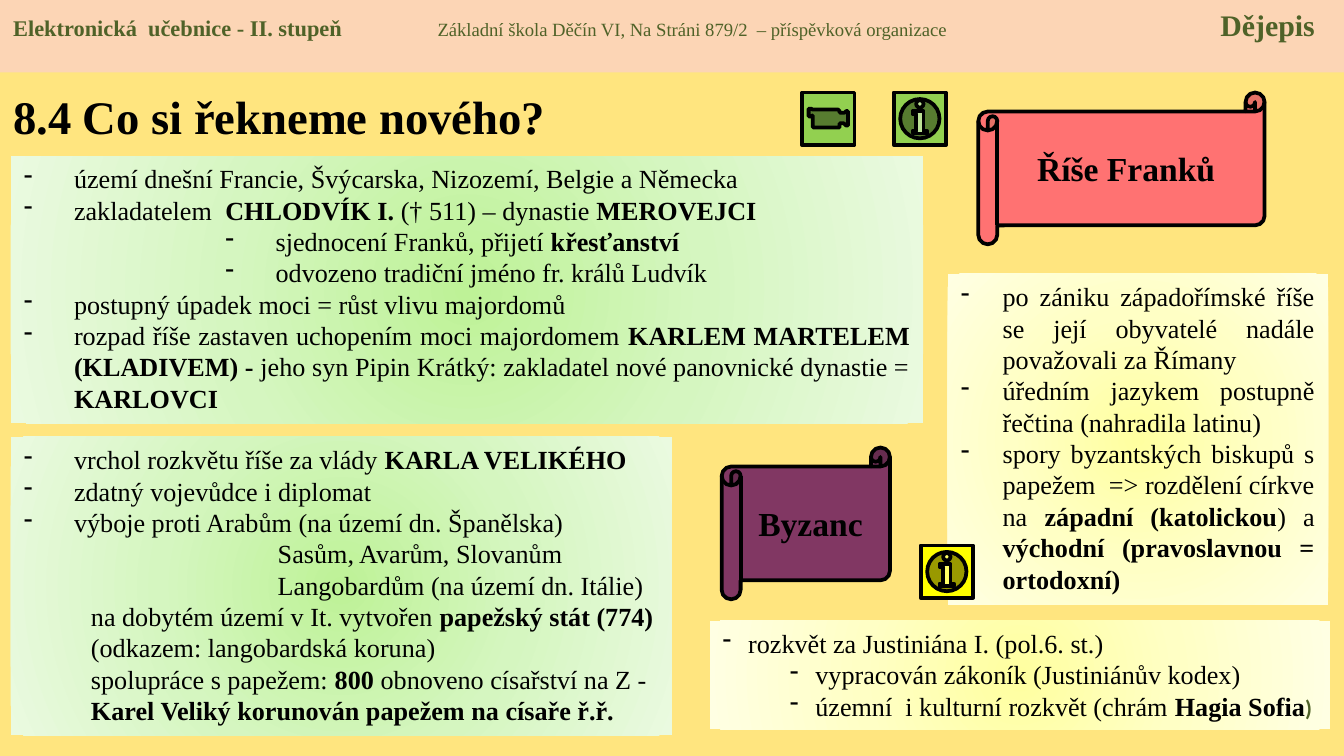
import pptx
import pptx.util
import pptx.dml.color
import pptx.enum.shapes
import pptx.enum.text
import pptx.oxml
import pptx.oxml.ns
from lxml import etree

Cm, Pt = pptx.util.Cm, pptx.util.Pt
SHAPES = pptx.enum.shapes.MSO_SHAPE
ANCHOR = pptx.enum.text.MSO_ANCHOR
ALIGN = pptx.enum.text.PP_ALIGN

COLORS = {
    "background": "FFE57F", "header": "FCD5B5", "header_text": "4F6228",
    "text": "000000", "franks": "FF0066", "byzantium": "813763",
    "green_button": "92D050", "yellow_button": "FFFF00",
}
GREEN_GLOW = ("BEF297", "D5F6C0", "EAFAE0")
YELLOW_GLOW = ("FFFFA0", "FFFFC5", "FFFFE3")
STYLES = {
    "plain": (14, False, "text", "Times New Roman"),
    "bold": (14, True, "text", "Times New Roman"),
    "bracket": (12, True, "header_text", "Calibri"),
    "title": (25, True, "text", "Times New Roman"),
    "scroll": (18, True, "text", "Times New Roman"),
    "book": (12, True, "header_text", "Times New Roman"),
    "school": (10, False, "header_text", "Times New Roman"),
    "subject": (16, True, "header_text", "Times New Roman"),
}
WIDE, DEEP = (0, 0.95, True), (3, 4.76, True)
INDENTED, ENEMY = (1, 1.27, False), (1, 4.8, False)
MEDIUM = (0, 0.79, True)
NARROW, NARROW_SUB = (0, 0.48, True), (1, 1.75, True)
HANGING = {WIDE: 0.95, DEEP: 0.95, MEDIUM: 0.79, NARROW: 0.48, NARROW_SUB: 0.48}

FRANKS = [
    (WIDE, [("území dnešní Francie, Švýcarska, Nizozemí, Belgie a Německa", "plain")]),
    (WIDE, [("zakladatelem  ", "plain"), ("CHLODVÍK I. ", "bold"),
            ("(† 511) – dynastie ", "plain"), ("MEROVEJCI", "bold")]),
    (DEEP, [("sjednocení Franků, přijetí ", "plain"), ("křesťanství", "bold")]),
    (DEEP, [("odvozeno tradiční jméno fr. králů Ludvík", "plain")]),
    (WIDE, [("postupný úpadek moci = růst vlivu majordomů", "plain")]),
    (WIDE, [("rozpad říše zastaven uchopením moci majordomem ", "plain"),
            ("KARLEM MARTELEM (KLADIVEM) - ", "bold"),
            ("jeho syn Pipin Krátký: zakladatel nové panovnické dynastie = ", "plain"),
            ("KARLOVCI", "bold")]),
]
CHARLEMAGNE = [
    (WIDE, [("vrchol rozkvětu říše za vlády ", "plain"), ("KARLA VELIKÉHO", "bold")]),
    (WIDE, [("zdatný vojevůdce i diplomat", "plain")]),
    (WIDE, [("výboje proti Arabům (na území dn. Španělska)", "plain")]),
    (ENEMY, [("Sasům, Avarům, Slovanům", "plain")]),
    (ENEMY, [("Langobardům (na území dn. Itálie)", "plain")]),
    (INDENTED, [("na dobytém území v It. vytvořen ", "plain"), ("papežský stát (774)", "bold")]),
    (INDENTED, [("(odkazem: langobardská koruna)", "plain")]),
    (INDENTED, [("spolupráce s papežem: ", "plain"), ("800 ", "bold"),
                ("obnoveno císařství na Z -", "plain")]),
    (INDENTED, [("Karel Veliký korunován papežem na císaře ř.ř.", "bold")]),
]
BYZANTIUM = [
    (MEDIUM, [("po zániku západořímské říše se její obyvatelé nadále považovali za Římany", "plain")]),
    (MEDIUM, [("úředním jazykem postupně řečtina (nahradila latinu)", "plain")]),
    (MEDIUM, [("spory byzantských biskupů s papežem  => rozdělení církve na ", "plain"),
              ("západní (katolickou", "bold"), (") a ", "plain"),
              ("východní (pravoslavnou = ortodoxní)", "bold")]),
]
JUSTINIAN = [
    (NARROW, [("rozkvět za Justiniána I. (pol.6. st.)", "plain")]),
    (NARROW_SUB, [("vypracován zákoník (Justiniánův kodex)", "plain")]),
    (NARROW_SUB, [("územní  i kulturní rozkvět (chrám ", "plain"),
                  ("Hagia Sofia", "bold"), (")", "bracket")]),
]


def rgb(name):
    return pptx.dml.color.RGBColor.from_string(COLORS[name])


def add_runs(paragraph, runs):
    for text, style in runs:
        run = paragraph.add_run()
        run.text = text
        size, bold, color, typeface = STYLES[style]
        run.font.size = Pt(size)
        run.font.bold = bold
        run.font.name = typeface
        run.font.color.rgb = rgb(color)


def add_outline(slide, preset, box, color=None, outlined=False):
    shape = slide.shapes.add_shape(preset, *map(Cm, box))
    shape.shadow.inherit = False
    if color:
        shape.fill.solid()
        shape.fill.fore_color.rgb = rgb(color)
    if outlined:
        shape.line.color.rgb = rgb("text")
        shape.line.width = Pt(2)
    else:
        shape.line.fill.background()
    return shape


def add_glow(shape, colors):
    shape.fill.background()
    stops = "".join(
        f'<a:gs pos="{position}"><a:srgbClr val="{color}"/></a:gs>'
        for position, color in zip((0, 50000, 100000), colors))
    gradient = pptx.oxml.parse_xml(
        f'<a:gradFill {pptx.oxml.ns.nsdecls("a")} rotWithShape="1"><a:gsLst>{stops}</a:gsLst>'
        '<a:path path="circle"><a:fillToRect l="50000" t="50000" r="50000" b="50000"/></a:path>'
        '</a:gradFill>')
    properties = shape.element.spPr
    properties.replace(properties.find(pptx.oxml.ns.qn("a:noFill")), gradient)


def add_header(slide, box):
    band = add_outline(slide, SHAPES.RECTANGLE, box, "header")
    band.text_frame.vertical_anchor = ANCHOR.TOP
    line = band.text_frame.paragraphs[0]
    line.alignment = ALIGN.LEFT
    properties = line._p.get_or_add_pPr()
    tabs = etree.SubElement(properties, pptx.oxml.ns.qn("a:tabLst"))
    for position, side in ((8.02, "l"), (box[2] - 0.8, "r")):
        etree.SubElement(tabs, pptx.oxml.ns.qn("a:tab"), pos=str(Cm(position)), algn=side)
    add_runs(line, [
        ("Elektronická  učebnice - II. stupeň\t", "book"),
        ("Základní škola Děčín VI, Na Stráni 879/2  – příspěvková organizace\t", "school"),
        ("Dějepis", "subject")])


def add_title(slide, box):
    heading = slide.shapes.add_textbox(*map(Cm, box)).text_frame
    heading.word_wrap = True
    heading.vertical_anchor = ANCHOR.MIDDLE
    add_runs(heading.paragraphs[0], [("8.4 Co si řekneme nového?", "title")])


def add_panel(slide, box, glow, notes, alignment=ALIGN.JUSTIFY, wrap=True):
    panel = add_outline(slide, SHAPES.RECTANGLE, box)
    add_glow(panel, glow)
    frame = panel.text_frame
    frame.word_wrap = wrap
    frame.auto_size = pptx.enum.text.MSO_AUTO_SIZE.SHAPE_TO_FIT_TEXT
    frame.vertical_anchor = ANCHOR.TOP
    for index, (layout, runs) in enumerate(notes):
        level, margin, bulleted = layout
        note = frame.add_paragraph() if index else frame.paragraphs[0]
        note.alignment = alignment
        note.level = level
        properties = note._p.get_or_add_pPr()
        properties.set("marL", str(Cm(margin)))
        properties.set("indent", str(-Cm(HANGING.get(layout, 0))))
        if bulleted:
            etree.SubElement(properties, pptx.oxml.ns.qn("a:buFontTx"))
            etree.SubElement(properties, pptx.oxml.ns.qn("a:buChar"), char="-")
        add_runs(note, runs)


def add_scroll(slide, box, color, name, opacity=100):
    scroll = add_outline(slide, SHAPES.HORIZONTAL_SCROLL, box, color, True)
    if opacity < 100:
        tint = scroll.element.spPr.find(pptx.oxml.ns.qn("a:solidFill"))[0]
        etree.SubElement(tint, pptx.oxml.ns.qn("a:alpha"), val=str(opacity * 1000))
    scroll.text_frame.vertical_anchor = ANCHOR.MIDDLE
    label = scroll.text_frame.paragraphs[0]
    label.alignment = ALIGN.CENTER
    add_runs(label, [(name, "scroll")])


def add_buttons(slide, size):
    for preset, left, top, color in (
            (SHAPES.ACTION_BUTTON_INFORMATION, 16.89, 1.75, "green_button"),
            (SHAPES.ACTION_BUTTON_INFORMATION, 17.4, 10.31, "yellow_button"),
            (SHAPES.ACTION_BUTTON_MOVIE, 15.16, 1.75, "green_button")):
        add_outline(slide, preset, (left, top, size, size), color, True)


def main():
    lesson = pptx.Presentation()
    lesson.slide_width, lesson.slide_height = Cm(25.4), Cm(14.29)
    slide = lesson.slides.add_slide(lesson.slide_layouts[6])
    slide.background.fill.solid()
    slide.background.fill.fore_color.rgb = rgb("background")
    add_title(slide, (0, 1.37, 11.91, 1.65))
    add_header(slide, (0, 0, 25.4, 1.37))
    add_panel(slide, (0.2, 2.95, 17.25, 5.05), GREEN_GLOW, FRANKS)
    add_scroll(slide, (18.49, 1.75, 5.41, 2.87), "franks", "Říše Franků", 50)
    add_panel(slide, (0.2, 8.26, 12.5, 5.64), GREEN_GLOW, CHARLEMAGNE, wrap=False)
    add_scroll(slide, (13.64, 8.46, 3.18, 2.87), "byzantium", "Byzanc")
    add_panel(slide, (17.91, 5.18, 7.19, 6.25), YELLOW_GLOW, BYZANTIUM)
    add_panel(slide, (13.41, 11.73, 11.73, 2.06), YELLOW_GLOW, JUSTINIAN, ALIGN.LEFT, False)
    add_buttons(slide, 0.99)
    lesson.save("out.pptx")


if __name__ == "__main__":
    main()
